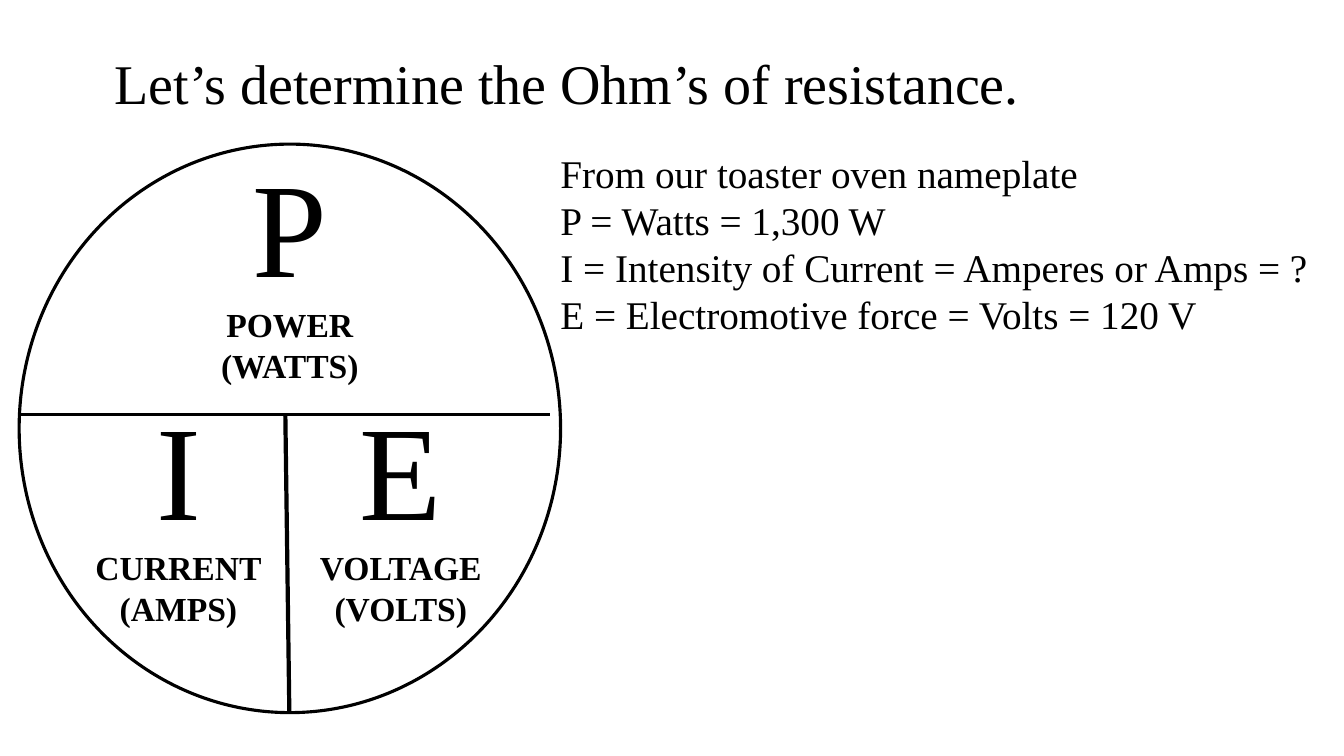
"""Build the Ohm's law wheel slide for the toaster oven example."""
from lxml import etree
from pptx import Presentation
from pptx import util as u
from pptx.dml.color import RGBColor
from pptx.enum import shapes, text
from pptx.oxml.ns import qn

PX = 9144
BLACK = "000000"


def color(value):
    return RGBColor.from_string(value)


def add_text(parent, box, lines, align):
    shape = parent.add_textbox(*[length * PX for length in box])
    frame = shape.text_frame
    frame.word_wrap = True
    for index, (line, size, bold) in enumerate(lines):
        paragraph = frame.paragraphs[0] if index == 0 else frame.add_paragraph()
        paragraph.alignment = align
        run = paragraph.add_run()
        run.text = line
        run.font.color.rgb = color(BLACK)
        style = {"name": "Times New Roman", "size": u.Pt(size), "bold": bold}
        for name, value in style.items():
            setattr(run.font, name, value)


presentation = Presentation()
presentation.slide_width = 1333 * PX
presentation.slide_height = 750 * PX
slide = presentation.slides.add_slide(presentation.slide_layouts[6])

title = [("Let’s determine the Ohm’s of resistance.", 40, False)]
add_text(slide.shapes, (104, 43, 1009, 212), title, text.PP_ALIGN.LEFT)

wheel = slide.shapes.add_group_shape().shapes
circle = wheel.add_shape(
    shapes.MSO_SHAPE.OVAL, *[length * PX for length in (19, 143, 537, 564)])
circle.shadow.inherit = False
circle.fill.background()
circle.line.color.rgb = color(BLACK)
circle.line.width = u.Pt(2.25)

sectors = [
    ((201, 137, 173, 252), "P", "POWER", "(WATTS)"),
    ((79, 378, 196, 252), "I", "CURRENT", "(AMPS)"),
    ((305, 378, 185, 252), "E", "VOLTAGE", "(VOLTS)"),
]
for box, symbol, quantity, unit in sectors:
    lines = [(symbol, 96, False), (quantity, 24, True), (unit, 24, True)]
    add_text(wheel, box, lines, text.PP_ALIGN.CENTER)

dividers = [((19, 411, 546, 411), 2.25), ((283, 411, 287, 707), 3)]
for ends, width in dividers:
    divider = wheel.add_connector(
        shapes.MSO_CONNECTOR.STRAIGHT, *[length * PX for length in ends])
    divider.line.color.rgb = color(BLACK)
    divider.line.width = u.Pt(width)
    etree.SubElement(divider.element.spPr, qn("a:effectLst"))

nameplate = [
    "From our toaster oven nameplate",
    "P = Watts = 1,300 W",
    "I = Intensity of Current = Amperes or Amps = ?",
    "E = Electromotive force = Volts = 120 V",
]
add_text(slide.shapes, (546, 143, 768, 293),
         [(line, 28, False) for line in nameplate], text.PP_ALIGN.LEFT)

presentation.save("out.pptx")
